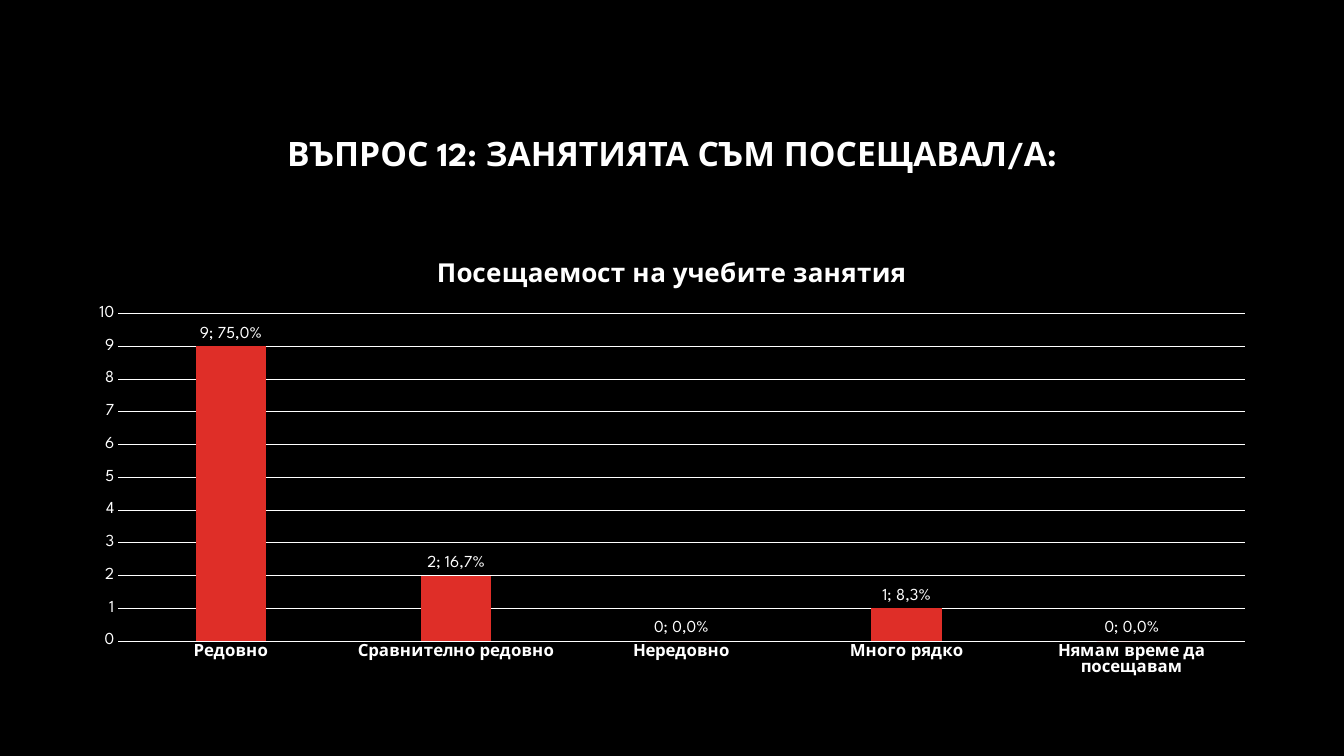
from pptx import Presentation
from pptx.chart.data import CategoryChartData
from pptx.dml.color import RGBColor
from pptx.enum.chart import XL_CHART_TYPE as ChartType, XL_LABEL_POSITION as LabelPosition, XL_TICK_MARK as TickMark
from pptx.enum.text import MSO_ANCHOR as Anchor, PP_ALIGN as Align
from pptx.util import Inches, Pt

TITLE = "ВЪПРОС 12: ЗАНЯТИЯТА СЪМ ПОСЕЩАВАЛ/А:"
CHART_TITLE = "Посещаемост на учебите занятия"
ANSWERS = [
    ("Редовно", 9, "9; 75,0%"),
    ("Сравнително редовно", 2, "2; 16,7%"),
    ("Нередовно", 0, "0; 0,0%"),
    ("Много рядко", 1, "1; 8,3%"),
    ("Нямам време да посещавам", 0, "0; 0,0%"),
]
BLACK, WHITE, RED = "000000", "FFFFFF", "DF2E28"
LEFT, WIDTH = 0.75, 11.83


def color(value):
    return RGBColor.from_string(value)


def apply(target, values):
    for name, value in values.items():
        setattr(target, name, value)


def style_font(font, size, bold=False):
    apply(font, {"name": "League Spartan", "size": Pt(size), "bold": bold})
    font.color.rgb = color(WHITE)


def style_line(line):
    line.width = Pt(0.75)
    line.color.rgb = color(WHITE)


def place(left, top, width, height):
    names = ("left", "top", "width", "height")
    return dict(zip(names, map(Inches, (left, top, width, height))))


def add_title(page):
    box = page.shapes.title
    apply(box, place(LEFT, 0.84, WIDTH, 1.41))
    apply(box.text_frame, {"text": TITLE, "word_wrap": True, "vertical_anchor": Anchor.MIDDLE})
    para = box.text_frame.paragraphs[0]
    apply(para, {"alignment": Align.CENTER, "line_spacing": 0.9})
    style_font(para.runs[0].font, 24, True)


def add_attendance_chart(page):
    data = CategoryChartData()
    data.categories = [answer for answer, count, label in ANSWERS]
    data.add_series(CHART_TITLE, [count for answer, count, label in ANSWERS])
    area = place(LEFT, 2.4, WIDTH, 4.4)
    chart = page.shapes.add_chart(ChartType.COLUMN_CLUSTERED, *area.values(), data).chart
    apply(chart, {"has_legend": False, "has_title": True})
    style_font(chart.font, 10)
    chart.chart_title.include_in_layout = False
    heading = chart.chart_title.text_frame
    heading.text = CHART_TITLE
    style_font(heading.paragraphs[0].runs[0].font, 18.6, True)

    ticks = {"major_tick_mark": TickMark.NONE, "minor_tick_mark": TickMark.NONE}
    answers, counts = chart.category_axis, chart.value_axis
    apply(answers, ticks)
    style_font(answers.tick_labels.font, 12, True)
    style_line(answers.format.line)
    scale = {"minimum_scale": 0, "maximum_scale": 10, "major_unit": 1}
    apply(counts, {**ticks, **scale, "has_major_gridlines": True})
    style_font(counts.tick_labels.font, 12)
    counts.format.line.fill.background()
    style_line(counts.major_gridlines.format.line)

    plot = chart.plots[0]
    apply(plot, {"gap_width": 219, "overlap": -27, "vary_by_categories": False})
    columns = plot.series[0]
    columns.format.fill.solid()
    columns.format.fill.fore_color.rgb = color(RED)
    labels = columns.data_labels
    apply(labels, {"show_value": True, "position": LabelPosition.OUTSIDE_END})
    style_font(labels.font, 12)
    for index, (answer, count, text) in enumerate(ANSWERS):
        label = columns.points[index].data_label
        label.text_frame.text = text
        label.position = LabelPosition.OUTSIDE_END
        style_font(label.text_frame.paragraphs[0].runs[0].font, 12)


def main():
    deck = Presentation()
    apply(deck, {"slide_width": Inches(13.33), "slide_height": Inches(7.5)})
    page = deck.slides.add_slide(deck.slide_layouts[5])
    page.background.fill.solid()
    page.background.fill.fore_color.rgb = color(BLACK)
    add_title(page)
    add_attendance_chart(page)
    deck.save("out.pptx")


if __name__ == "__main__":
    main()
